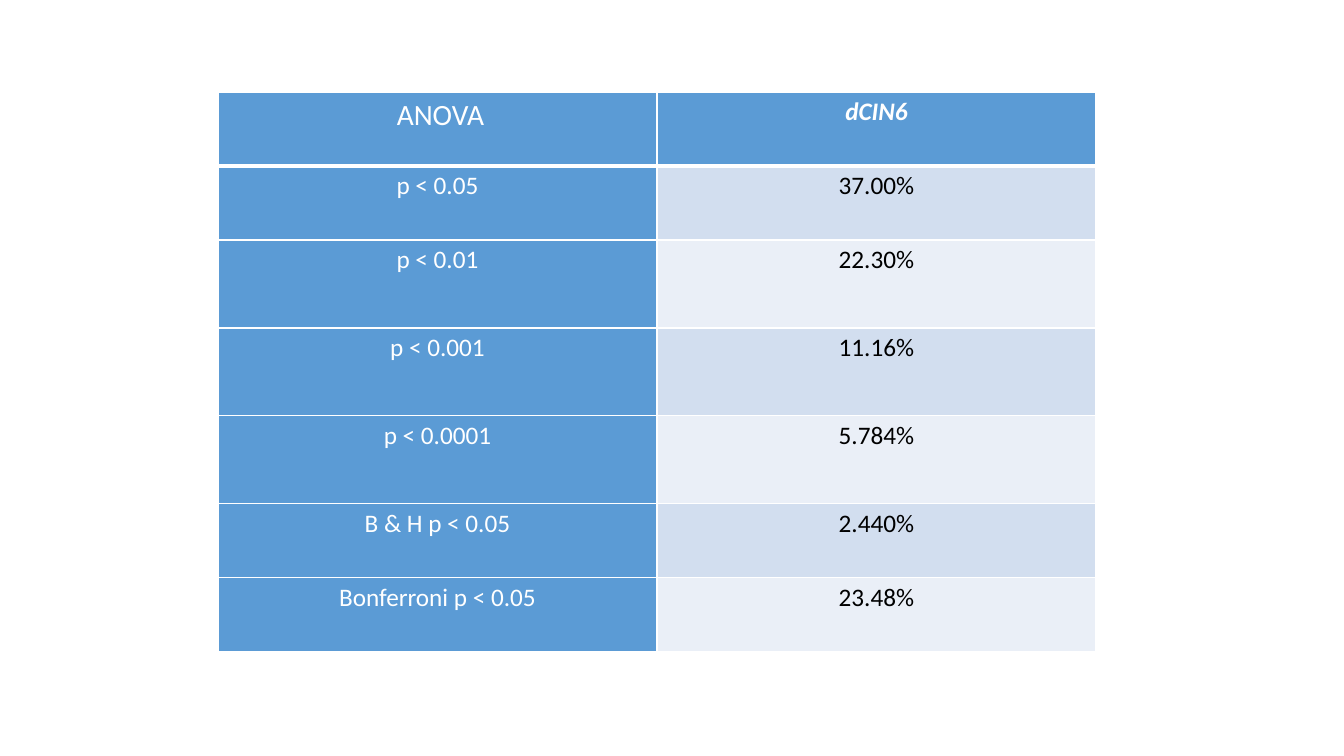
from lxml.etree import SubElement as Sub
from pptx import Presentation
from pptx.dml.color import RGBColor
from pptx.enum.text import PP_ALIGN as Align
from pptx.oxml.ns import qn
from pptx.util import Pt

PX = 914400 / 100.8
WHITE = RGBColor(0xFF, 0xFF, 0xFF)
BLACK = RGBColor(0, 0, 0)
BLUE = RGBColor(0x5B, 0x9B, 0xD5)
BANDS = [RGBColor(0xEA, 0xEF, 0xF7), RGBColor(0xD2, 0xDE, 0xEF)]

ROWS = [
    ("ANOVA", "dCIN6", 74),
    ("p < 0.05", "37.00%", 74),
    ("p < 0.01", "22.30%", 88),
    ("p < 0.001", "11.16%", 88),
    ("p < 0.0001", "5.784%", 88),
    ("B & H p < 0.05", "2.440%", 74),
    ("Bonferroni p < 0.05", "23.48%", 74),
]


def px(n):
    return round(n * PX)


def edge(cell, side, width):
    """Draw one white border; call before the fill is set."""
    line = Sub(cell._tc.get_or_add_tcPr(), qn("a:ln" + side), w=str(Pt(width)))
    fill = Sub(line, qn("a:solidFill"))
    Sub(fill, qn("a:srgbClr"), val=str(WHITE))


deck = Presentation()
deck.slide_width = px(1344)
deck.slide_height = px(756)
slide = deck.slides.add_slide(deck.slide_layouts[6])

high = sum(row[2] for row in ROWS)
frame = slide.shapes.add_table(len(ROWS), 2, px(218), px(92), px(878), px(high))
table = frame.table
for col in table.columns:
    col.width = px(439)

for r, (label, value, height) in enumerate(ROWS):
    table.rows[r].height = px(height)
    for c, text in enumerate((label, value)):
        cell = table.cell(r, c)
        head = r == 0
        for side in "LRTB":
            edge(cell, side, 3 if head and side == "B" else 1)
        dark = head or c == 0
        cell.fill.solid()
        cell.fill.fore_color.rgb = BLUE if dark else BANDS[r % 2]
        title = head and c == 0
        cell.margin_left = px(13 if title else 7)
        cell.margin_right = px(7)
        cell.margin_top = cell.margin_bottom = 0

        para = cell.text_frame.paragraphs[0]
        para.alignment = Align.CENTER
        para.line_spacing = 1.15
        run = para.add_run()
        run.text = text
        font = run.font
        font.name = "Calibri"
        font.size = Pt(21 if title else 18)
        font.bold = font.italic = head and c == 1
        font.color.rgb = WHITE if dark else BLACK

deck.save("out.pptx")
